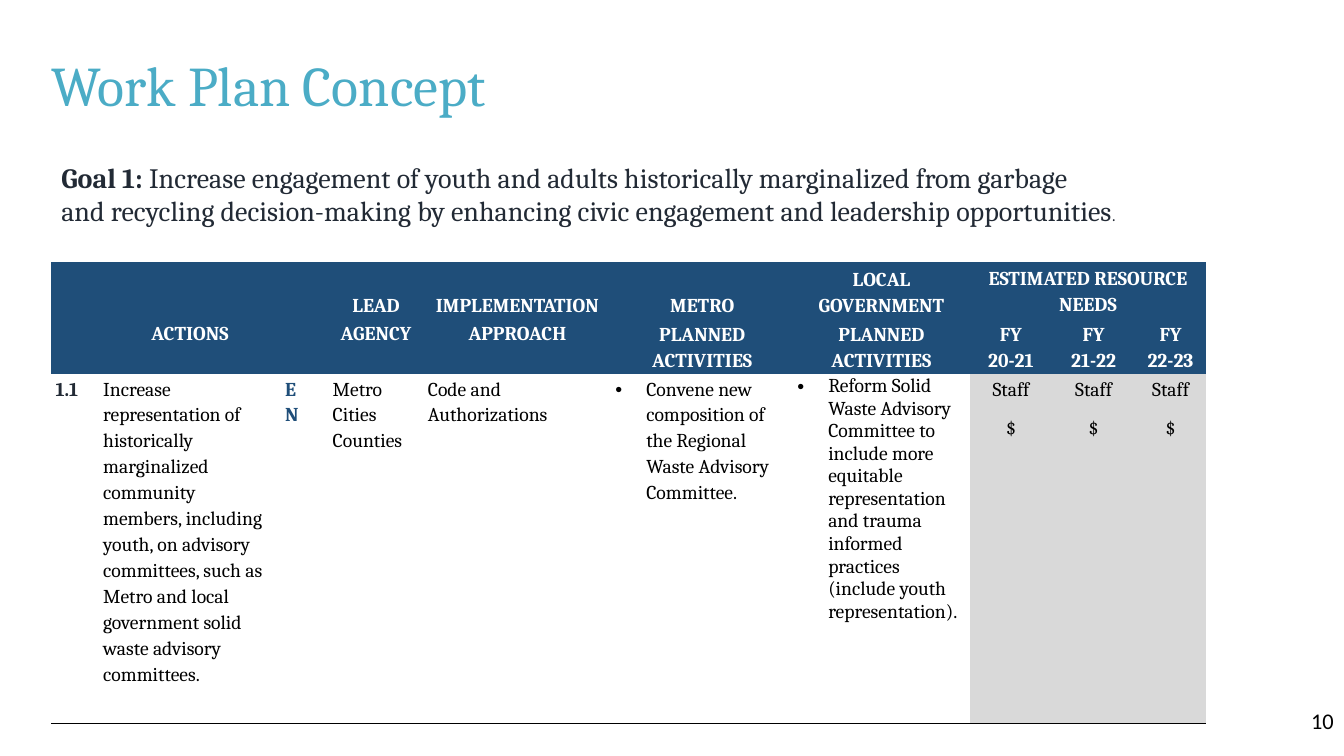
"""Build the work plan slide with its goal and its table of actions."""
from lxml import etree
from pptx import Presentation
from pptx.dml.color import RGBColor
from pptx.enum.text import MSO_ANCHOR, PP_ALIGN
from pptx.oxml.ns import qn
from pptx.util import Pt

LEFT, CENTER, RIGHT = PP_ALIGN.LEFT, PP_ALIGN.CENTER, PP_ALIGN.RIGHT
TOP, MIDDLE, BOTTOM = MSO_ANCHOR.TOP, MSO_ANCHOR.MIDDLE, MSO_ANCHOR.BOTTOM

BLACK = RGBColor(0x00, 0x00, 0x00)
WHITE = RGBColor(0xFF, 0xFF, 0xFF)
TEAL = RGBColor(0x4B, 0xAC, 0xC6)
INK = RGBColor(0x22, 0x2A, 0x35)
NAVY = RGBColor(0x1F, 0x4E, 0x79)
GREY = RGBColor(0xD9, 0xD9, 0xD9)

TITLE = "Work Plan Concept"
PAGE_NUMBER = "10"
GOAL = [
    [("Goal 1: ", 20, True),
     ("Increase engagement of youth and adults historically marginalized from garbage", 20, False)],
    [("and recycling decision-making by enhancing civic engagement and leadership opportunities", 20, False),
     (".", 12, False)],
]

COLUMN_WIDTHS = [34, 130, 34, 68, 134, 130, 126, 59, 59, 51]
ROW_HEIGHTS = [39.6, 39.6, 249.6]
RESOURCE_COLUMN = 7
HEADINGS = [
    {3: ["LEAD"], 4: ["IMPLEMENTATION"], 5: ["METRO"], 6: ["LOCAL GOVERNMENT"],
     7: ["ESTIMATED RESOURCE NEEDS"]},
    {1: ["ACTIONS"], 3: ["AGENCY"], 4: ["APPROACH"], 5: ["PLANNED ACTIVITIES"],
     6: ["PLANNED ACTIVITIES"], 7: ["FY", "20-21"], 8: ["FY", "21-22"], 9: ["FY", "22-23"]},
]
HEADING_ANCHORS = [
    {3: BOTTOM, 4: BOTTOM, 5: BOTTOM, 6: BOTTOM, 7: MIDDLE},
    {5: MIDDLE, 6: MIDDLE, 7: MIDDLE, 8: MIDDLE, 9: MIDDLE},
]
RESOURCES = ["Staff", "$"]
ACTION = [
    ["1.1"],
    ["Increase representation of historically marginalized community members, including youth, "
     "on advisory committees, such as Metro and local government solid waste advisory committees."],
    ["E", "N"],
    ["Metro", "Cities", "Counties"],
    ["Code and Authorizations"],
    ["Convene new composition of the Regional Waste Advisory Committee."],
    ["Reform Solid Waste Advisory Committee to include more equitable representation and "
     "trauma informed practices (include youth representation)."],
    RESOURCES, RESOURCES, RESOURCES,
]
SPACED = {"line_spacing": 1.15}
CENTERED = {"line_spacing": 1.15, "alignment": CENTER}
RESOURCE_FORMAT = {**CENTERED, "space_after": Pt(10)}
ACTION_COLORS = {0: INK, 2: NAVY}
BULLET_INDENTS = {5: 22, 6: 22}
PLAIN_SPACING_COLUMN = 6
NO_STYLE = "{2D5ABB26-0587-4C30-8999-92F81FD0307C}"


def apply(target, values):
    for name, value in values.items():
        setattr(target, name, value)


def style_font(font, size, color, bold=False, name="Cambria"):
    apply(font, {"size": Pt(size), "bold": bold, "name": name})
    font.color.rgb = color


def add_text(slide, box, lines, color, margin=None, alignment=LEFT, spacing=1.0, name="Cambria"):
    frame = slide.shapes.add_textbox(*map(Pt, box)).text_frame
    apply(frame, {"word_wrap": True, "vertical_anchor": MIDDLE})
    if margin is not None:
        apply(frame, dict.fromkeys(
            ["margin_left", "margin_top", "margin_right", "margin_bottom"], Pt(margin)))
    for index, line in enumerate(lines):
        paragraph = frame.add_paragraph() if index else frame.paragraphs[0]
        apply(paragraph, {"alignment": alignment, "line_spacing": spacing})
        for text, size, bold in line:
            run = paragraph.add_run()
            run.text = text
            style_font(run.font, size, color, bold, name)


def add_bullet(paragraph, indent):
    properties = paragraph._p.get_or_add_pPr()
    properties.set("marL", str(Pt(indent)))
    properties.set("indent", str(-Pt(indent)))
    etree.SubElement(properties, qn("a:buFont")).set("typeface", "Arial")
    etree.SubElement(properties, qn("a:buChar")).set("char", "•")


def add_bottom_border(cell):
    line = etree.Element(qn("a:lnB"), w=str(Pt(1)))
    fill = etree.SubElement(line, qn("a:solidFill"))
    etree.SubElement(fill, qn("a:srgbClr")).set("val", str(BLACK))
    cell._tc.get_or_add_tcPr().insert(0, line)


def fill_cell(cell, lines, color, bold, paragraph_format, anchor=TOP, fill=None, indent=0):
    apply(cell, {"margin_left": Pt(3), "margin_right": Pt(3), "margin_top": Pt(0.7),
                 "margin_bottom": Pt(0.7), "vertical_anchor": anchor})
    if fill is None:
        cell.fill.background()
    else:
        cell.fill.solid()
        cell.fill.fore_color.rgb = fill
    for index, text in enumerate(lines):
        paragraph = cell.text_frame.add_paragraph() if index else cell.text_frame.paragraphs[0]
        apply(paragraph, paragraph_format)
        if indent:
            add_bullet(paragraph, indent)
        run = paragraph.add_run()
        run.text = text
        style_font(run.font, 14, color, bold)


def add_plan_table(slide):
    table = slide.shapes.add_table(
        len(ROW_HEIGHTS), len(COLUMN_WIDTHS), Pt(36.7), Pt(187.2),
        Pt(sum(COLUMN_WIDTHS)), Pt(sum(ROW_HEIGHTS))).table
    apply(table, {"first_row": False, "horz_banding": False})
    table._tbl.tblPr.find(qn("a:tableStyleId")).text = NO_STYLE
    for column, width in zip(table.columns, COLUMN_WIDTHS):
        column.width = Pt(width)
    for row, height in zip(table.rows, ROW_HEIGHTS):
        row.height = Pt(height)
    table.cell(0, RESOURCE_COLUMN).merge(table.cell(0, len(COLUMN_WIDTHS) - 1))

    for row, (headings, anchors) in enumerate(zip(HEADINGS, HEADING_ANCHORS)):
        for column in range(len(COLUMN_WIDTHS)):
            fill_cell(table.cell(row, column), headings.get(column, []), WHITE, True,
                      CENTERED, anchors.get(column, TOP), NAVY)

    for column, lines in enumerate(ACTION):
        cell = table.cell(len(HEADINGS), column)
        is_resource = column >= RESOURCE_COLUMN
        paragraph_format = RESOURCE_FORMAT if is_resource else SPACED
        if column == PLAIN_SPACING_COLUMN:
            paragraph_format = {"line_spacing": 1.0}
        fill_cell(cell, lines, ACTION_COLORS.get(column, BLACK), column in ACTION_COLORS,
                  paragraph_format, fill=GREY if is_resource else None,
                  indent=BULLET_INDENTS.get(column, 0))
        add_bottom_border(cell)


def main():
    presentation = Presentation()
    apply(presentation, {"slide_width": Pt(960), "slide_height": Pt(540)})
    slide = presentation.slides.add_slide(presentation.slide_layouts[6])
    add_text(slide, (36.7, 36, 688.3, 54), [[(TITLE, 40, False)]], TEAL, margin=0, spacing=0.9)
    add_text(slide, (743.8, 500.4, 216, 28.8), [[(PAGE_NUMBER, 16, False)]], BLACK,
             alignment=RIGHT, name="Calibri")
    add_text(slide, (36.7, 110.9, 812.9, 55.4), GOAL, INK)
    add_plan_table(slide)
    presentation.save("out.pptx")


if __name__ == "__main__":
    main()
